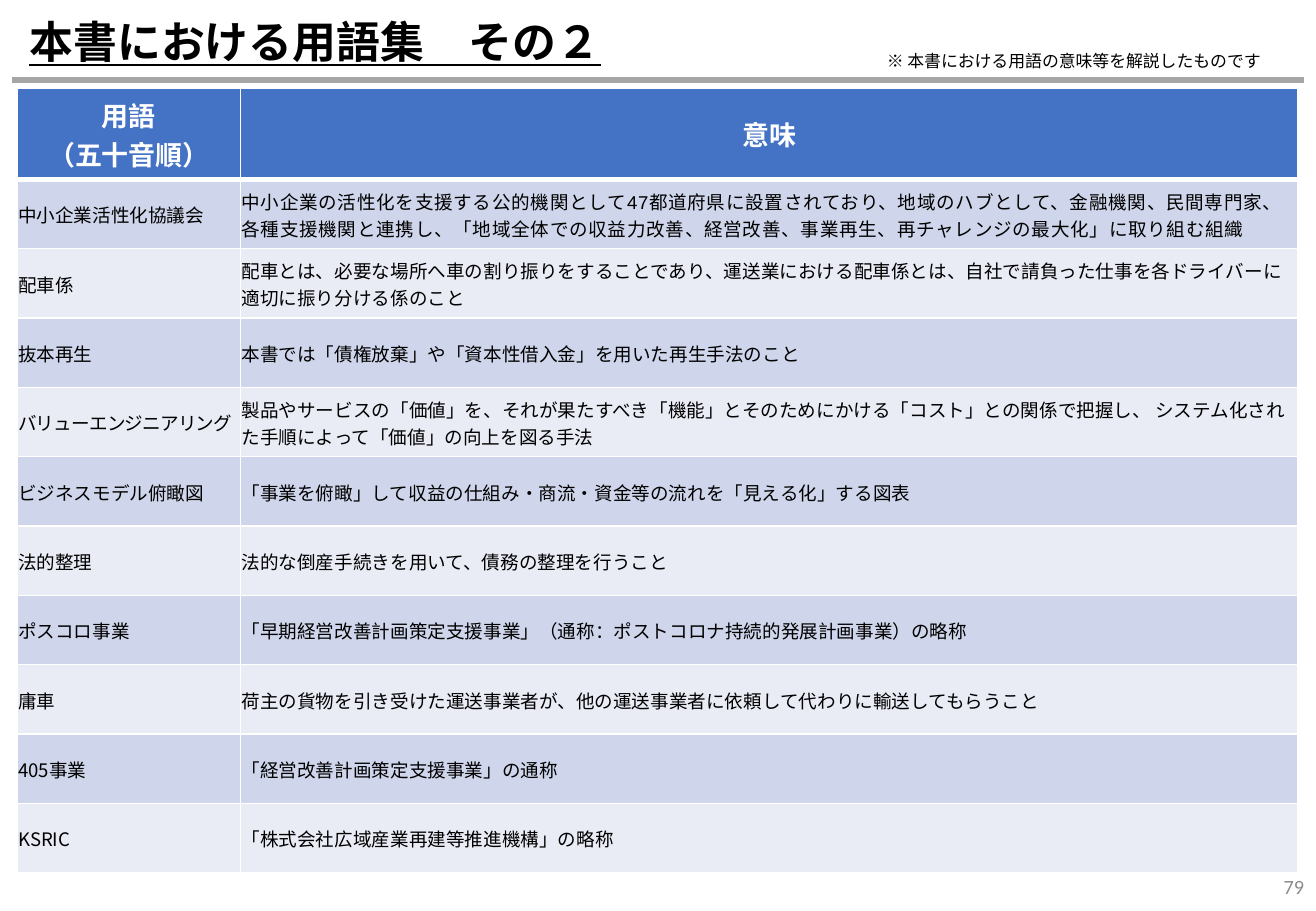
from lxml import etree
from pptx import Presentation
from pptx.dml.color import RGBColor
from pptx.enum.shapes import MSO_CONNECTOR
from pptx.enum.text import MSO_ANCHOR, MSO_AUTO_SIZE, PP_ALIGN
from pptx.oxml.ns import qn
from pptx.util import Cm, Pt

STRAIGHT = MSO_CONNECTOR.STRAIGHT
TOP, MIDDLE = MSO_ANCHOR.TOP, MSO_ANCHOR.MIDDLE
LEFT, CENTER, RIGHT = PP_ALIGN.LEFT, PP_ALIGN.CENTER, PP_ALIGN.RIGHT
FIT_SHAPE = MSO_AUTO_SIZE.SHAPE_TO_FIT_TEXT

BLACK = RGBColor(0x00, 0x00, 0x00)
WHITE = RGBColor(0xFF, 0xFF, 0xFF)
HEADER_BLUE = RGBColor(0x44, 0x72, 0xC4)
BANDS = [RGBColor(0xCF, 0xD5, 0xEA), RGBColor(0xE9, 0xEB, 0xF5)]
RULE_GRAY = RGBColor(0xA6, 0xA6, 0xA6)
NUMBER_GRAY = RGBColor(0x8C, 0x8C, 0x8C)

ARIAL, CALIBRI, NOTO = "Arial", "Calibri", "Noto Sans CJK JP"

# Term, meaning, font of the meaning
GLOSSARY = [
    ("中小企業活性化協議会",
     "中小企業の活性化を支援する公的機関として47都道府県に設置されており、地域のハブとして、"
     "金融機関、民間専門家、各種支援機関と連携し、「地域全体での収益力改善、経営改善、事業再生、"
     "再チャレンジの最大化」に取り組む組織", ARIAL),
    ("配車係",
     "配車とは、必要な場所へ車の割り振りをすることであり、運送業における配車係とは、"
     "自社で請負った仕事を各ドライバーに適切に振り分ける係のこと", NOTO),
    ("抜本再生", "本書では「債権放棄」や「資本性借入金」を用いた再生手法のこと", NOTO),
    ("バリューエンジニアリング",
     "製品やサービスの「価値」を、それが果たすべき「機能」とそのためにかける「コスト」との関係で把握し、 "
     "システム化された手順によって「価値」の向上を図る手法", CALIBRI),
    ("ビジネスモデル俯瞰図",
     "「事業を俯瞰」して収益の仕組み・商流・資金等の流れを「見える化」する図表", NOTO),
    ("法的整理", "法的な倒産手続きを用いて、債務の整理を行うこと", NOTO),
    ("ポスコロ事業",
     "「早期経営改善計画策定支援事業」（通称：ポストコロナ持続的発展計画事業）の略称", NOTO),
    ("庸車",
     "荷主の貨物を引き受けた運送事業者が、他の運送事業者に依頼して代わりに輸送してもらうこと", CALIBRI),
    ("405事業", "「経営改善計画策定支援事業」の通称", NOTO),
    ("KSRIC", "「株式会社広域産業再建等推進機構」の略称", NOTO),
]
# Letter spacing in hundredths of a point, by (row, column)
LETTER_SPACING = {(1, 1): 40, (4, 0): -50}


def write_text(frame, text, size, font_name, color, align=LEFT, bold=False, spacing=0):
    frame.text = text
    for paragraph in frame.paragraphs:
        paragraph.alignment = align
        font = paragraph.font
        font.size, font.name, font.bold = Pt(size), font_name, bold
        font.color.rgb = color
        properties = paragraph._p.pPr.find(qn("a:defRPr"))
        properties.set("spc", str(spacing))
        east_asian = etree.Element(qn("a:ea"), typeface=NOTO)
        properties.find(qn("a:latin")).addnext(east_asian)


def format_cell(cell, color, top=1, bottom=1):
    cell.vertical_anchor = MIDDLE
    cell.fill.solid()
    cell.fill.fore_color.rgb = color
    borders = [("a:lnL", 1), ("a:lnR", 1), ("a:lnT", top), ("a:lnB", bottom)]
    for position, (tag, width) in enumerate(borders):
        border = etree.Element(qn(tag), w=str(Pt(width)))
        fill = etree.SubElement(border, qn("a:solidFill"))
        etree.SubElement(fill, qn("a:srgbClr"), val=str(WHITE))
        cell._tc.tcPr.insert(position, border)


presentation = Presentation()
presentation.slide_width, presentation.slide_height = Cm(27.51), Cm(19.05)
slide = presentation.slides.add_slide(presentation.slide_layouts[5])

# Glossary table
table = slide.shapes.add_table(
    len(GLOSSARY) + 1, 2, Cm(0.36), Cm(1.85), Cm(26.77), Cm(16.4)).table
table.columns[0].width, table.columns[1].width = Cm(4.67), Cm(22.1)
for row in table.rows:
    row.height = Cm(1.45)
table.rows[0].height = Cm(1.9)

for column, heading in enumerate(["用語\n（五十音順）", "意味"]):
    cell = table.cell(0, column)
    format_cell(cell, HEADER_BLUE, bottom=3)
    write_text(cell.text_frame, heading, 16, CALIBRI, WHITE, CENTER, bold=True)

for row, (term, meaning, meaning_font) in enumerate(GLOSSARY, start=1):
    for column, (text, font_name) in enumerate([(term, NOTO), (meaning, meaning_font)]):
        cell = table.cell(row, column)
        format_cell(cell, BANDS[(row - 1) % 2], top=3 if row == 1 else 1)
        cell.margin_left = cell.margin_right = cell.margin_top = Cm(0.02)
        cell.margin_bottom = Cm(0)
        write_text(cell.text_frame, text, 11, font_name, BLACK,
                   spacing=LETTER_SPACING.get((row, column), 0))

# Page number
page_number = slide.shapes.add_textbox(Cm(26.16), Cm(18.03), Cm(1.35), Cm(1.02)).text_frame
page_number.word_wrap = True
page_number.vertical_anchor = MIDDLE
write_text(page_number, "79", 12, CALIBRI, NUMBER_GRAY, RIGHT)

# Rule under the title
rule = slide.shapes.add_connector(STRAIGHT, Cm(0.25), Cm(1.68), Cm(27.25), Cm(1.68))
rule.line.color.rgb = RULE_GRAY
rule.line.width = Pt(3.5)
etree.SubElement(rule._element.spPr, qn("a:effectLst"))

# Title
title = slide.shapes.title
title.left, title.top, title.width, title.height = Cm(0.36), Cm(0.18), Cm(17.91), Cm(1.37)
title.text_frame.vertical_anchor = TOP
title.text_frame.auto_size = FIT_SHAPE
write_text(title.text_frame, "本書における用語集　その２", 26, ARIAL, BLACK, bold=True)
title.text_frame.paragraphs[0].font.underline = True

# Note beside the title
note = slide.shapes.add_textbox(Cm(18.29), Cm(0.94), Cm(8.99), Cm(0.69)).text_frame
note.word_wrap = True
note.auto_size = FIT_SHAPE
write_text(note, "※ 本書における用語の意味等を解説したものです", 10, CALIBRI, BLACK)

presentation.save("out.pptx")
